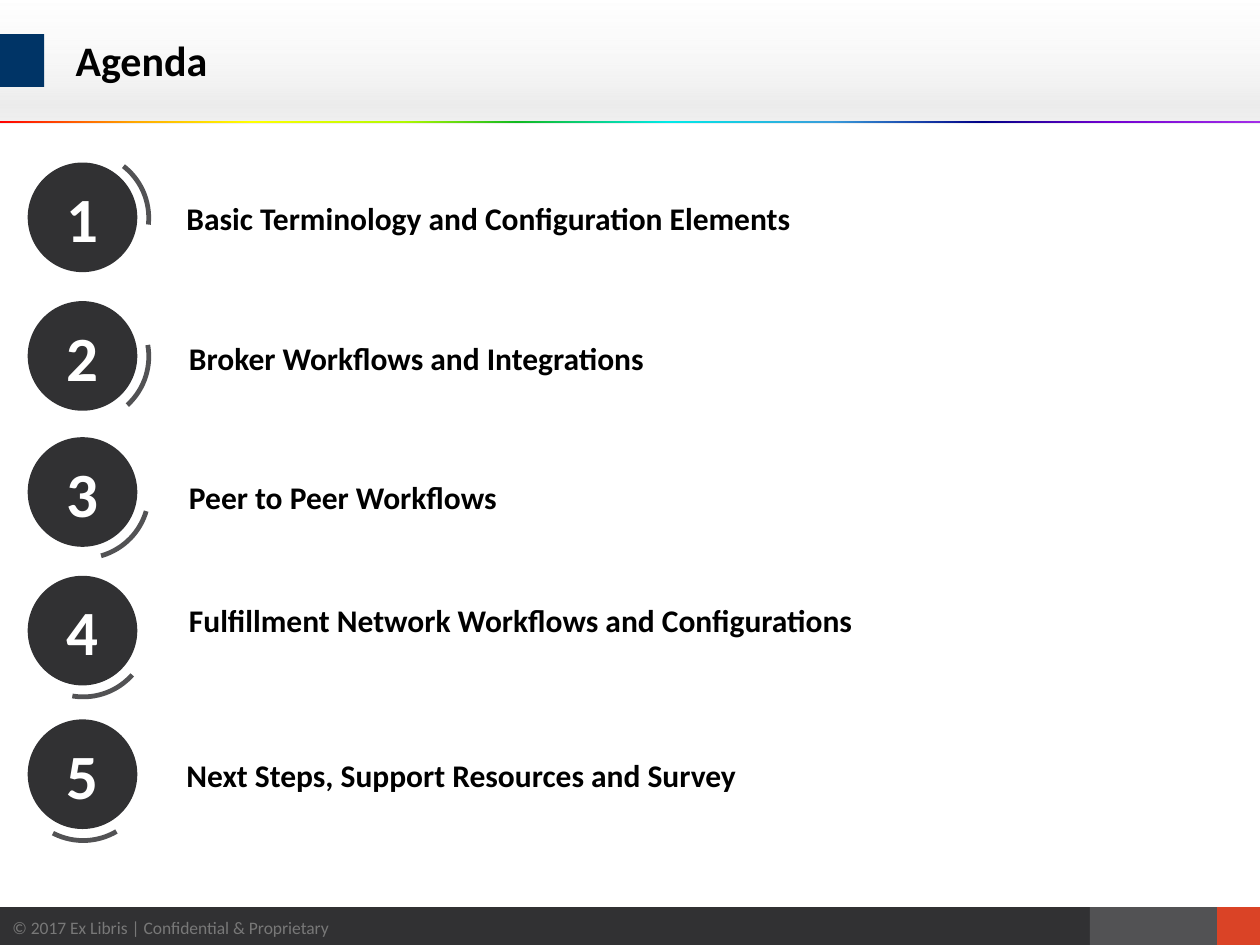
from pptx import Presentation
from pptx.dml.color import RGBColor
from pptx.enum.shapes import MSO_SHAPE
from pptx.enum.text import MSO_ANCHOR, PP_ALIGN
from pptx.oxml import parse_xml
from pptx.oxml.ns import nsdecls, qn
from pptx.util import Inches, Pt

RECT, OVAL, ARC = MSO_SHAPE.RECTANGLE, MSO_SHAPE.OVAL, MSO_SHAPE.BLOCK_ARC
MIDDLE = MSO_ANCHOR.MIDDLE
LEFT, CENTER = PP_ALIGN.LEFT, PP_ALIGN.CENTER
FONT = "Calibri"
TITLE_ONLY = 5

COLORS = {
    "white": "FFFFFF",
    "black": "000000",
    "charcoal": "313133",
    "gray": "525254",
    "muted": "787878",
    "red": "DA4326",
    "navy": "003466",
}
HEADER_STOPS = [(0, "FAFAFA", 12), (66, "D7D7D7", 30), (83, "D7D7D7", 47), (100, "E4E4E4", 54)]
RAINBOW_STOPS = [
    (0, "A22DE8", 100), (12, "7200D1", 100), (22, "000086", 100), (34, "399CDB", 100),
    (47, "00E9E8", 100), (59, "11B920", 100), (68, "B1F900", 100), (80, "FFFF00", 100),
    (89, "FFAB00", 100), (100, "FF0000", 100),
]
AGENDA = [
    ("Basic Terminology and Configuration Elements", 1.23, 5.1, 1.43, 1.38),
    ("Broker Workflows and Integrations", 2.33, 47, 1.45, 2.49),
    ("Peer to Peer Workflows", 3.41, 73.5, 1.45, 3.59),
    ("Fulfillment Network Workflows and Configurations", 4.51, 98.8, 1.45, 4.57),
    ("Next Steps, Support Resources and Survey", 5.65, 116.7, 1.43, 5.8),
]


def inches(*lengths):
    """Convert a series of numbers to inches."""
    return [Inches(length) for length in lengths]


def write(shape, text, size, color, bold=False, align=LEFT, inset=None, spacing=None):
    """Fill a shape with one formatted, vertically centred paragraph."""
    frame = shape.text_frame
    frame.word_wrap = True
    frame.vertical_anchor = MIDDLE
    if inset is not None:
        frame.margin_left = frame.margin_right = Inches(inset)
        frame.margin_top = frame.margin_bottom = Inches(inset)
    paragraph = frame.paragraphs[0]
    paragraph.alignment = align
    if spacing:
        paragraph.line_spacing = spacing
    run = paragraph.add_run()
    run.text = text
    run.font.name, run.font.size, run.font.bold = FONT, Pt(size), bold
    run.font.color.rgb = RGBColor.from_string(COLORS[color])


def add_block(shapes, kind, box, color=None):
    """Add a preset shape without line or shadow, filled if a color is given."""
    block = shapes.add_shape(kind, *inches(*box))
    block.shadow.inherit = False
    block.line.fill.background()
    if color:
        block.fill.solid()
        block.fill.fore_color.rgb = RGBColor.from_string(COLORS[color])
    else:
        block.fill.background()
    return block


def add_gradient_band(shapes, box, stops, angle):
    """Add a rectangle with a linear gradient of (position, color, opacity) stops."""
    band = add_block(shapes, RECT, box)
    marks = "".join(
        f'<a:gs pos="{position * 1000}"><a:srgbClr val="{color}">'
        f'<a:alpha val="{opacity * 1000}"/></a:srgbClr></a:gs>'
        for position, color, opacity in stops
    )
    gradient = parse_xml(
        f'<a:gradFill {nsdecls("a")} rotWithShape="1"><a:gsLst>{marks}</a:gsLst>'
        f'<a:lin ang="{angle * 60000}" scaled="0"/></a:gradFill>'
    )
    properties = band.element.spPr
    properties.replace(properties.find(qn("a:noFill")), gradient)


def add_footer(slide, top, height):
    """Draw the footer strip with its copyright line."""
    strip = add_block(slide.shapes, RECT, (0, top, 8.65, height), "charcoal")
    write(strip, "© 2017 Ex Libris | Confidential & Proprietary", 10, "muted")
    add_block(slide.shapes, RECT, (8.65, top, 1.01, height), "gray")
    add_block(slide.shapes, RECT, (9.66, top, 0.35, height), "red")


def add_header(slide, width, height):
    """Draw the header band, its marker and rainbow rule, and set the title."""
    add_gradient_band(slide.shapes, (-0.01, 0.02, width + 0.01, height - 0.02), HEADER_STOPS, 90)
    add_block(slide.shapes, RECT, (0, 0.27, 0.35, 0.42), "navy")
    add_gradient_band(slide.shapes, (0, height - 0.02, width, 0.02), RAINBOW_STOPS, 180)
    title = slide.shapes.title
    title.left, title.top, title.width, title.height = inches(0.5, 0.08, 9.07, 0.84)
    write(title, "Agenda", 24, "black", bold=True, spacing=0.9)
    title.element.getparent().append(title.element)


def add_badge(slide, number, left, top, rotation):
    """Draw a numbered disc with a rotated arc around a one-inch white circle."""
    badge = slide.shapes.add_group_shape().shapes
    add_block(badge, OVAL, (left, top, 1, 1), "white")
    arc = add_block(badge, ARC, (left - 0.04, top - 0.04, 1.08, 1.08), "gray")
    for index, value in enumerate((181.725, 0.424, 0.035)):
        arc.adjustments[index] = value
    arc.rotation = rotation
    disc = add_block(badge, OVAL, (left + 0.06, top + 0.06, 0.87, 0.87), "charcoal")
    write(disc, str(number), 36, "white", bold=True, align=CENTER)


def add_agenda(slide, left):
    """Place each agenda topic beside its numbered badge."""
    for number, (topic, badge_top, rotation, topic_left, topic_top) in enumerate(AGENDA, 1):
        add_badge(slide, number, left, badge_top, rotation)
        label = slide.shapes.add_textbox(*inches(topic_left, topic_top, 6.07, 0.7))
        write(label, topic, 18, "black", bold=True, inset=0.05)


def main():
    """Build and save the agenda slide."""
    deck = Presentation()
    deck.slide_width, deck.slide_height = inches(10, 7.5)
    slide = deck.slides.add_slide(deck.slide_layouts[TITLE_ONLY])
    add_footer(slide, 7.2, 0.32)
    add_header(slide, 10, 0.98)
    add_agenda(slide, 0.16)
    deck.save("out.pptx")


if __name__ == "__main__":
    main()
